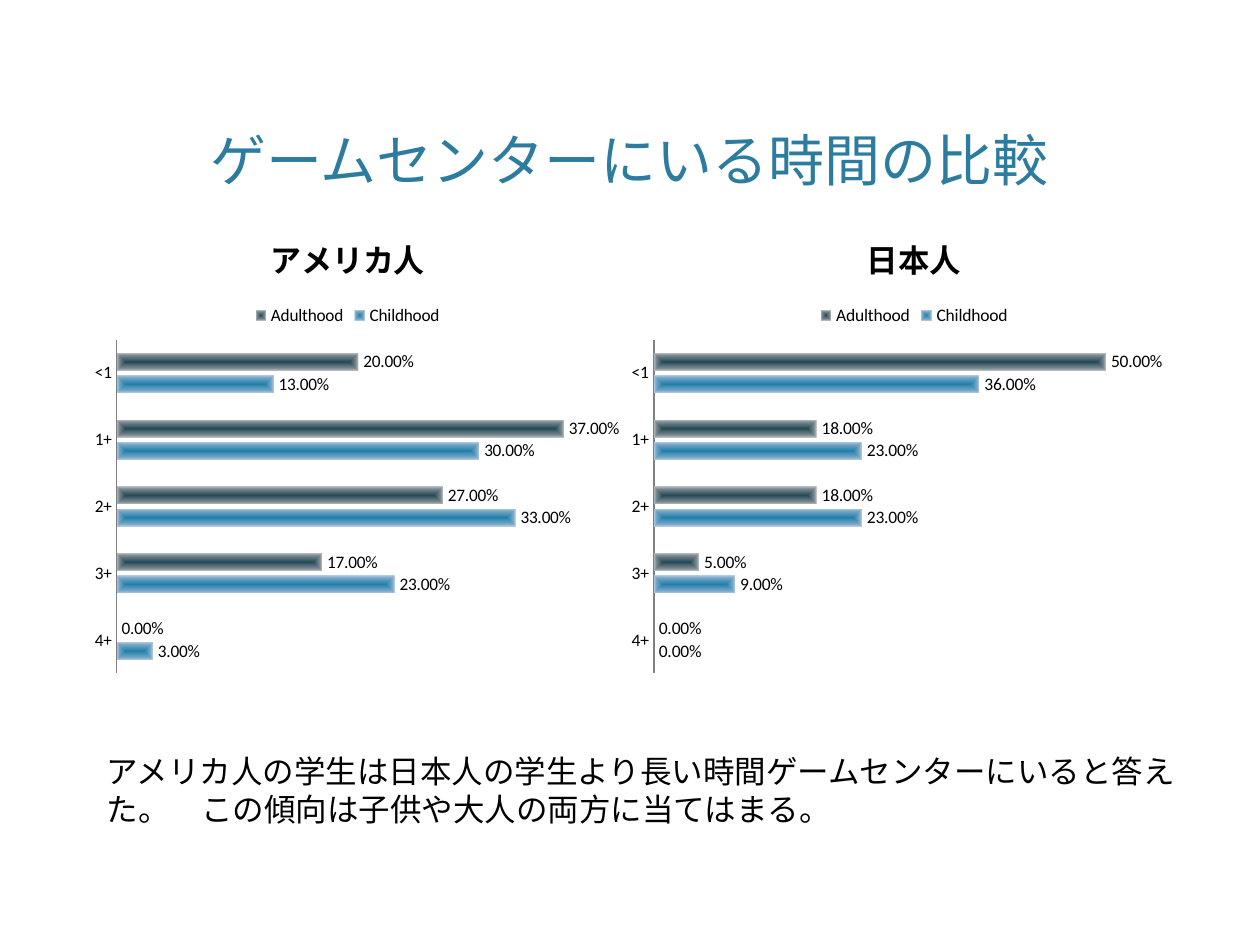
from lxml.etree import fromstring
from pptx import Presentation
from pptx.chart.data import CategoryChartData
from pptx.dml.color import RGBColor
from pptx.enum.chart import XL_CHART_TYPE, XL_LEGEND_POSITION, XL_TICK_MARK
from pptx.enum.text import MSO_ANCHOR, PP_ALIGN
from pptx.oxml.ns import qn
from pptx.util import Inches, Pt

COLORS = {"title": "2C7C9F", "text": "000000", "axis": "808080"}
GRADIENTS = {
    "Childhood": ("2080AA", "74A5C6", "B4CADD"),
    "Adulthood": ("244A58", "78868D", "B8BFC1"),
}
HOURS = ["4+", "3+", "2+", "1+", "<1"]
CHARTS = [
    {"title": "日本人", "box": (4.92, 1.67, 4.67, 3.75), "top": 0.6,
     "series": {"Childhood": (0, 0.09, 0.23, 0.23, 0.36),
                "Adulthood": (0, 0.05, 0.18, 0.18, 0.5)}},
    {"title": "アメリカ人", "box": (0.67, 1.67, 4.25, 3.75), "top": 0.4,
     "series": {"Childhood": (0.03, 0.23, 0.33, 0.3, 0.13),
                "Adulthood": (0, 0.17, 0.27, 0.37, 0.2)}},
]
NOTE = ("アメリカ人の学生は日本人の学生より長い時間ゲームセンターにいると答えた。"
        "\u3000この傾向は子供や大人の両方に当てはまる。").replace("\u3000", "　")


def style_font(font, size, color="text", name="Calibri", bold=False):
    """Set the face, size, weight and colour of a font."""
    font.name, font.size, font.bold = name, Pt(size), bold
    font.color.rgb = RGBColor.from_string(COLORS[color])


def write(tf, text, align=PP_ALIGN.LEFT, anchor=MSO_ANCHOR.TOP, **font):
    """Write one formatted paragraph into a text frame."""
    tf.word_wrap, tf.vertical_anchor = True, anchor
    p = tf.paragraphs[0]
    p.alignment = align
    r = p.add_run()
    r.text = text
    style_font(r.font, **font)


def place(shape, box):
    """Move a shape to a box given in inches."""
    shape.left, shape.top, shape.width, shape.height = map(Inches, box)


def fill_radial(series, colors):
    """Fill the bars of a series with a gradient that starts at the centre."""
    stops = "".join(f'<a:gs pos="{pos}"><a:srgbClr val="{c}"/></a:gs>'
                    for pos, c in zip((0, 70000, 100000), colors))
    series.format.fill.solid()
    solid = series.format.fill._xPr.find(qn("a:solidFill"))
    solid.getparent().replace(solid, fromstring(
        '<a:gradFill xmlns:a="http://schemas.openxmlformats.org/drawingml/2006/main"'
        f' rotWithShape="1"><a:gsLst>{stops}</a:gsLst><a:path path="rect">'
        '<a:fillToRect l="50000" t="50000" r="50000" b="50000"/></a:path></a:gradFill>'))


def add_title(s, text, box):
    """Place and fill the title placeholder."""
    place(s.shapes.title, box)
    write(s.shapes.title.text_frame, text, PP_ALIGN.CENTER, MSO_ANCHOR.BOTTOM,
          size=32, color="title", name="Noto Sans CJK JP")


def add_hours_chart(s, title, box, top, series):
    """Add a bar chart of the share of answers for each number of hours."""
    data = CategoryChartData(number_format="0.00%")
    data.categories = HOURS
    for name, values in series.items():
        data.add_series(name, values)
    chart = s.shapes.add_chart(XL_CHART_TYPE.BAR_CLUSTERED,
                               *map(Inches, box), data).chart
    style_font(chart.font, 10)
    chart.has_title = True
    write(chart.chart_title.text_frame, title, PP_ALIGN.CENTER, size=18, bold=True)
    chart.chart_title.include_in_layout = False
    chart.has_legend = True
    chart.legend.position = XL_LEGEND_POSITION.TOP
    chart.legend.include_in_layout = False

    cat, val = chart.category_axis, chart.value_axis
    cat.major_tick_mark = cat.minor_tick_mark = XL_TICK_MARK.NONE
    cat.format.line.color.rgb = RGBColor.from_string(COLORS["axis"])
    val.visible = val.has_major_gridlines = False
    val.minimum_scale, val.maximum_scale = 0, top
    val.tick_labels.number_format = "0.00%"
    val.tick_labels.number_format_is_linked = False

    plot = chart.plots[0]
    plot.gap_width, plot.overlap, plot.vary_by_categories = 150, -25, False
    plot.has_data_labels = True
    labels = plot.data_labels
    labels.show_value = True
    labels.number_format, labels.number_format_is_linked = "0.00%", False
    for bars in plot.series:
        fill_radial(bars, GRADIENTS[bars.name])


def add_note(s, text, box):
    """Add the conclusion below the charts."""
    tb = s.shapes.add_textbox(*map(Inches, box))
    write(tb.text_frame, text, size=18)


def main():
    """Build the slide and save it."""
    prs = Presentation()
    prs.slide_width, prs.slide_height = Inches(10), Inches(7.5)
    s = prs.slides.add_slide(prs.slide_layouts[5])
    add_title(s, "ゲームセンターにいる時間の比較", (0.6, 0.12, 8.8, 1.46))
    for chart in CHARTS:
        add_hours_chart(s, **chart)
    add_note(s, NOTE, (0.75, 5.92, 8.83, 0.71))
    prs.save("out.pptx")


if __name__ == "__main__":
    main()
